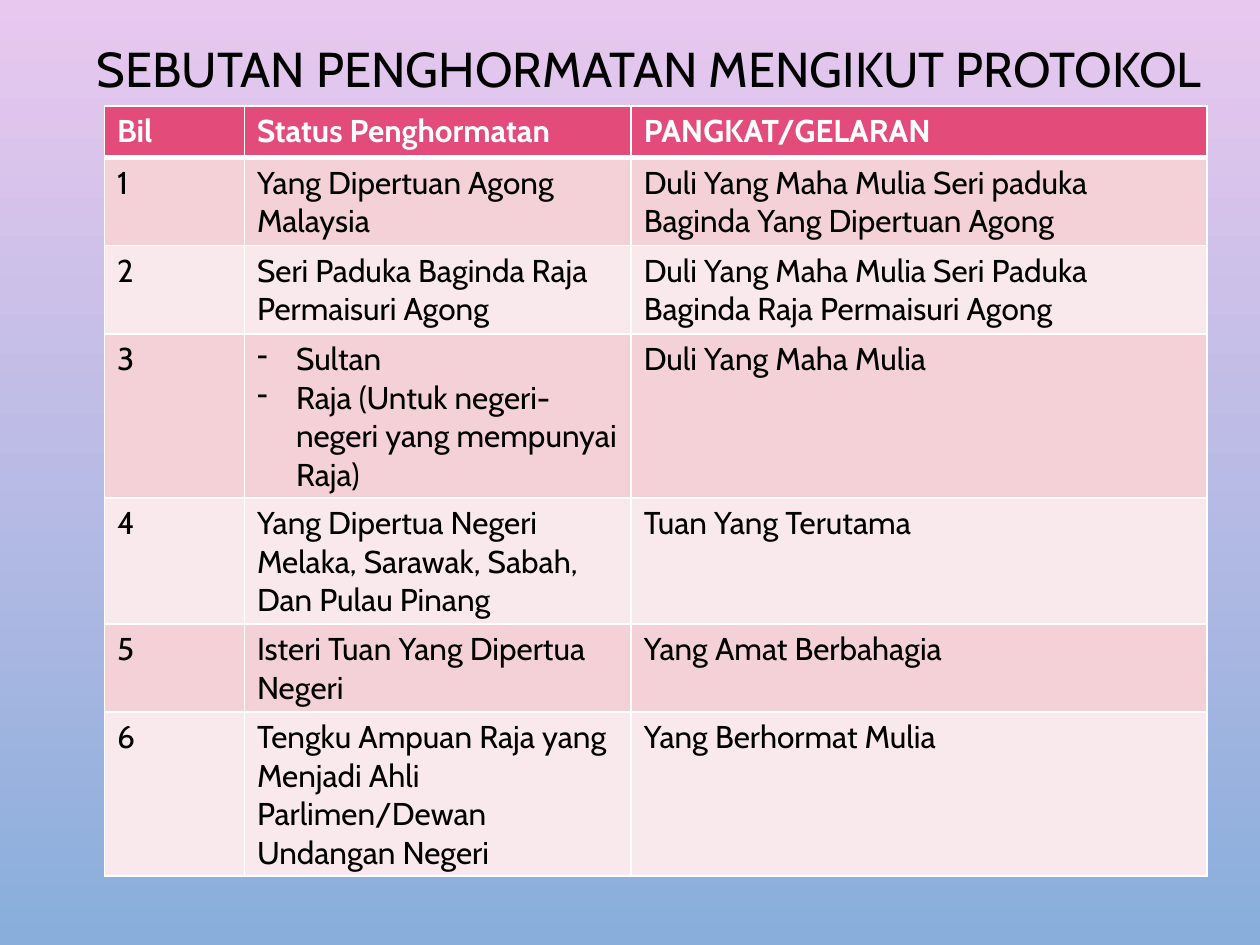
from dataclasses import dataclass

from lxml import etree
from pptx import Presentation
from pptx.dml.color import RGBColor
from pptx.enum.text import MSO_ANCHOR, PP_ALIGN
from pptx.oxml.ns import qn
from pptx.util import Inches, Pt

CENTER = PP_ALIGN.CENTER
MIDDLE = MSO_ANCHOR.MIDDLE

BLACK = RGBColor(0x00, 0x00, 0x00)
WHITE = RGBColor(0xFF, 0xFF, 0xFF)
LILAC = RGBColor(0xE9, 0xC8, 0xEF)
SKY = RGBColor(0x89, 0xAE, 0xDB)
ROSE = RGBColor(0xE3, 0x4B, 0x7A)
PINK = RGBColor(0xF4, 0xD0, 0xD7)
BLUSH = RGBColor(0xFA, 0xE9, 0xEC)

SLIDE_WIDTH = Inches(10)
SLIDE_HEIGHT = Inches(7.5)
GRID_COLUMNS = 100
GRID_ROWS = 75
COLUMN_WIDTHS = (11.1, 30.7, 45.7)
ROW_HEIGHT = 4.1
TALL_ROW_HEIGHT = 12.9
THIN_BORDER = Pt(1)
HEADER_BORDER = Pt(3)
DASH_INDENT = Inches(0.31)

TITLE_FORMAT = {"name": "Cabin", "size": Pt(28), "bold": False}
HEADER_FORMAT = {"name": "Cabin", "size": Pt(18), "bold": True}
BODY_FORMAT = {"name": "Cabin", "size": Pt(18), "bold": False}


@dataclass(frozen=True)
class Honorific:
    statuses: tuple[str, ...]
    title: str
    height: float = ROW_HEIGHT


HEADINGS = ("Bil", "Status Penghormatan", "PANGKAT/GELARAN")
HONORIFICS = (
    Honorific(
        ("Yang Dipertuan Agong Malaysia",),
        "Duli Yang Maha Mulia Seri paduka Baginda Yang Dipertuan Agong",
    ),
    Honorific(
        ("Seri Paduka Baginda Raja Permaisuri Agong",),
        "Duli Yang Maha Mulia Seri Paduka Baginda Raja Permaisuri Agong",
    ),
    Honorific(
        ("Sultan", "Raja (Untuk negeri-negeri yang mempunyai Raja)"),
        "Duli Yang Maha Mulia",
        TALL_ROW_HEIGHT,
    ),
    Honorific(
        ("Yang Dipertua Negeri Melaka, Sarawak, Sabah, Dan Pulau Pinang",),
        "Tuan Yang Terutama",
    ),
    Honorific(("Isteri Tuan Yang Dipertua Negeri",), "Yang Amat Berbahagia"),
    Honorific(
        ("Tengku Ampuan Raja yang Menjadi Ahli Parlimen/Dewan Undangan Negeri",),
        "Yang Berhormat Mulia",
    ),
)


def across(columns: float) -> int:
    return round(SLIDE_WIDTH * columns / GRID_COLUMNS)


def down(rows: float) -> int:
    return round(SLIDE_HEIGHT * rows / GRID_ROWS)


def write_span(para, text: str, format_values: dict, color: RGBColor) -> None:
    span = para.add_run()
    span.text = text
    for attribute, value in format_values.items():
        setattr(span.font, attribute, value)
    span.font.color.rgb = color


def add_dash(para) -> None:
    properties = para._p.get_or_add_pPr()
    properties.set("marL", str(DASH_INDENT))
    properties.set("indent", str(-DASH_INDENT))
    etree.SubElement(properties, qn("a:buChar")).set("char", "-")


def add_borders(cell, top: int, bottom: int) -> None:
    properties = cell._tc.get_or_add_tcPr()
    widths = {"lnL": THIN_BORDER, "lnR": THIN_BORDER, "lnT": top, "lnB": bottom}
    for side, width in widths.items():
        line = etree.SubElement(properties, qn(f"a:{side}"), w=str(width))
        fill = etree.SubElement(line, qn("a:solidFill"))
        etree.SubElement(fill, qn("a:srgbClr"), val=str(WHITE))


def fill_cell(cell, texts: tuple[str, ...], row_index: int) -> None:
    is_header = row_index == 0
    add_borders(
        cell,
        HEADER_BORDER if row_index == 1 else THIN_BORDER,
        HEADER_BORDER if is_header else THIN_BORDER,
    )
    cell.fill.solid()
    cell.fill.fore_color.rgb = ROSE if is_header else (BLUSH, PINK)[row_index % 2]
    frame = cell.text_frame
    for index, text in enumerate(texts):
        para = frame.add_paragraph() if index else frame.paragraphs[0]
        if len(texts) > 1:
            add_dash(para)
        write_span(
            para,
            text,
            HEADER_FORMAT if is_header else BODY_FORMAT,
            WHITE if is_header else BLACK,
        )


def paint_background(page) -> None:
    fill = page.background.fill
    fill.gradient()
    fill.gradient_angle = 270
    for stop, color in zip(fill.gradient_stops, (LILAC, SKY)):
        stop.color.rgb = color


def add_title(page) -> None:
    box = page.shapes.add_textbox(across(5), down(3), across(93), down(5.4))
    frame = box.text_frame
    frame.word_wrap = True
    frame.vertical_anchor = MIDDLE
    para = frame.paragraphs[0]
    para.alignment = CENTER
    para.line_spacing = 0.9
    write_span(para, "SEBUTAN PENGHORMATAN MENGIKUT PROTOKOL", TITLE_FORMAT, BLACK)


def add_honorific_table(page) -> None:
    heights = [ROW_HEIGHT] + [honorific.height for honorific in HONORIFICS]
    contents = [[(heading,) for heading in HEADINGS]]
    for number, honorific in enumerate(HONORIFICS, 1):
        contents.append([(str(number),), honorific.statuses, (honorific.title,)])
    table = page.shapes.add_table(
        len(heights),
        len(COLUMN_WIDTHS),
        across(8.3),
        down(8.4),
        across(sum(COLUMN_WIDTHS)),
        down(sum(heights)),
    ).table
    for column, width in zip(table.columns, COLUMN_WIDTHS):
        column.width = across(width)
    for row_index, (row, height) in enumerate(zip(table.rows, heights)):
        row.height = down(height)
        for cell, texts in zip(row.cells, contents[row_index]):
            fill_cell(cell, texts, row_index)


def main() -> None:
    deck = Presentation()
    deck.slide_width = SLIDE_WIDTH
    deck.slide_height = SLIDE_HEIGHT
    page = deck.slides.add_slide(deck.slide_layouts[6])
    paint_background(page)
    add_title(page)
    add_honorific_table(page)
    deck.save("out.pptx")


if __name__ == "__main__":
    main()
